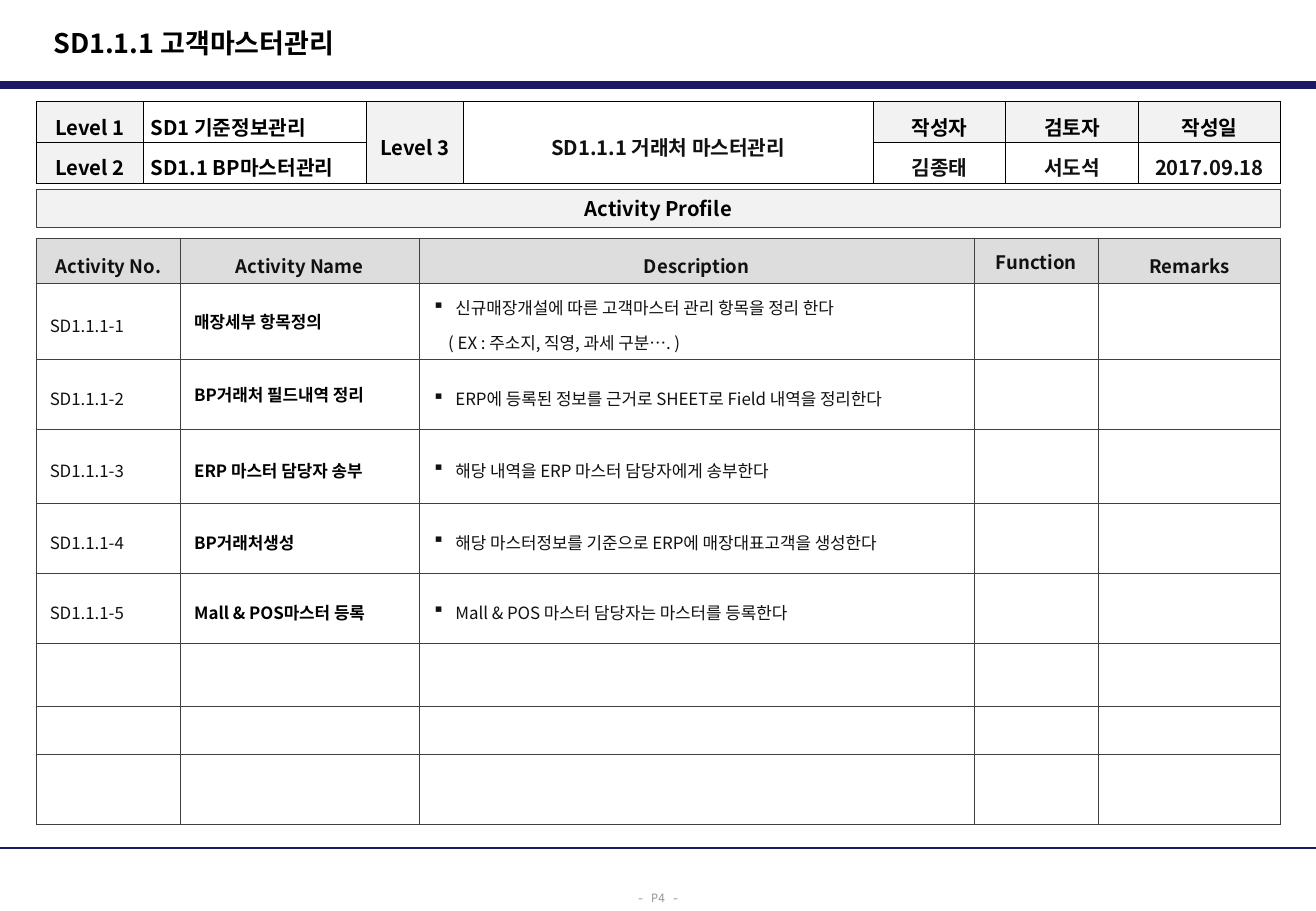
from dataclasses import dataclass

from lxml.etree import SubElement
from pptx import Presentation
from pptx.dml.color import RGBColor
from pptx.enum.shapes import MSO_CONNECTOR as Connector, MSO_SHAPE as Shape
from pptx.enum.text import MSO_ANCHOR as Anchor, PP_ALIGN as Align
from pptx.oxml.ns import qn
from pptx.util import Cm, Pt

FONT = "Noto Sans CJK KR"
NAVY, BLACK, INK, BORDER = "191966", "000000", "111111", "404040"
PALE, GREY = "F2F2F2", "DDDDDD"


@dataclass
class Box:
    """A region of the slide, in centimetres."""
    left: float
    top: float
    width: float
    height: float

    def lengths(self):
        return Cm(self.left), Cm(self.top), Cm(self.width), Cm(self.height)


def color(value):
    return RGBColor.from_string(value)


def style(paragraph, size, ink, bold=False, align=Align.LEFT, spacing=None, name=FONT):
    paragraph.alignment = align
    if spacing:
        paragraph.line_spacing = spacing
    font = paragraph.font
    font.name, font.size, font.bold = name, Pt(size), bold
    font.color.rgb = color(ink)
    # East Asian typeface
    properties = paragraph._p.get_or_add_pPr().find(qn("a:defRPr"))
    SubElement(properties, qn("a:ea")).set("typeface", name)


def indent(paragraph, left, bullet=None):
    properties = paragraph._p.get_or_add_pPr()
    properties.set("marL", str(Cm(left)))
    properties.set("indent", str(Cm(-left if bullet else 0)))
    if bullet:
        SubElement(properties, qn("a:buChar")).set("char", bullet)


def add_rule(slide, box, weight):
    line = slide.shapes.add_connector(
        Connector.STRAIGHT, Cm(box.left), Cm(box.top),
        Cm(box.left + box.width), Cm(box.top + box.height))
    line.line.color.rgb = color(NAVY)
    line.line.width = Pt(weight)
    SubElement(line._element.spPr, qn("a:effectLst"))


def add_grid(slide, box, columns, rows, border, margins):
    """Add a plain bordered table whose columns and rows share the box."""
    table = slide.shapes.add_table(len(rows), len(columns), *box.lengths()).table
    table.first_row = table.horz_banding = False
    for column, share in zip(table.columns, columns):
        column.width = Cm(box.width * share / sum(columns))
    for row, share in zip(table.rows, rows):
        row.height = Cm(box.height * share / sum(rows))
    side, edge = margins
    for cell in table.iter_cells():
        cell.margin_left = cell.margin_right = Cm(side)
        cell.margin_top = cell.margin_bottom = Cm(edge)
        cell.vertical_anchor = Anchor.MIDDLE
        properties = cell._tc.get_or_add_tcPr()
        for tag in ("a:lnL", "a:lnR", "a:lnT", "a:lnB"):
            line = SubElement(properties, qn(tag), w=str(Pt(0.5)))
            fill = SubElement(line, qn("a:solidFill"))
            SubElement(fill, qn("a:srgbClr"), val=border)
        cell.fill.background()
    return table


def write_cell(cell, text, size, ink, bold=False, align=Align.LEFT, spacing=1.3, fill=None):
    cell.text = text
    style(cell.text_frame.paragraphs[0], size, ink, bold, align, spacing)
    if fill:
        cell.fill.solid()
        cell.fill.fore_color.rgb = color(fill)


def add_title(slide, box, text):
    title = slide.shapes.title
    title.left, title.top, title.width, title.height = box.lengths()
    title.text = text
    title.text_frame.vertical_anchor = Anchor.MIDDLE
    style(title.text_frame.paragraphs[0], 16, BLACK, bold=True)


def add_document_table(slide, box):
    columns = [2.24, 4.65, 2.03, 8.56, 2.77, 2.77, 2.97]
    table = add_grid(slide, box, columns, [1, 1], BLACK, (0.15, 0.02))
    for column in (2, 3):
        table.cell(0, column).merge(table.cell(1, column))
    texts = [
        ["Level 1", "SD1 기준정보관리", "Level 3", "SD1.1.1 거래처 마스터관리",
         "작성자", "검토자", "작성일"],
        ["Level 2", "SD1.1 BP마스터관리", None, None, "김종태", "서도석", "2017.09.18"],
    ]
    for row, line in enumerate(texts):
        for column, text in enumerate(line):
            if text is None:
                continue
            label = column in (0, 2) or (row == 0 and column > 3)
            write_cell(table.cell(row, column), text, 12,
                       BLACK if label or column == 1 else INK, bold=True,
                       align=Align.LEFT if column == 1 else Align.CENTER,
                       fill=PALE if label else None)


def add_profile_bar(slide, box, text):
    bar = slide.shapes.add_shape(Shape.RECTANGLE, *box.lengths())
    bar.shadow.inherit = False
    bar.fill.solid()
    bar.fill.fore_color.rgb = color(PALE)
    bar.line.color.rgb = color(BORDER)
    bar.line.width = Pt(0.5)
    frame = bar.text_frame
    frame.text = text
    frame.vertical_anchor = Anchor.MIDDLE
    style(frame.paragraphs[0], 12, BLACK, bold=True, align=Align.CENTER)


def add_activity_table(slide, box):
    columns = [3.02, 4.98, 11.61, 2.59, 3.81]
    rows = [0.93, 1.59, 1.46, 1.54, 1.46, 1.46, 1.33, 1, 1.46]
    table = add_grid(slide, box, columns, rows, BORDER, (0.28, 0.1))
    # Header row
    headings = ["Activity No.", "Activity Name", "Description", "Function", "Remarks"]
    for column, heading in enumerate(headings):
        write_cell(table.cell(0, column), heading, 11, INK, bold=True, align=Align.CENTER,
                   spacing=1 if heading == "Function" else 1.3, fill=GREY)
    # Activities: name, its line spacing, description, example
    activities = [
        ("매장세부 항목정의", 1, "신규매장개설에 따른 고객마스터 관리 항목을 정리 한다",
         "( EX : 주소지, 직영, 과세 구분…. )"),
        ("BP거래처 필드내역 정리", 1, "ERP에 등록된 정보를 근거로 SHEET로 Field 내역을 정리한다", None),
        ("ERP 마스터 담당자 송부", 1.3, "해당 내역을 ERP 마스터 담당자에게 송부한다", None),
        ("BP거래처생성", 1.3, "해당 마스터정보를 기준으로 ERP에 매장대표고객을 생성한다", None),
        ("Mall & POS마스터 등록", 1.3, "Mall & POS 마스터 담당자는 마스터를 등록한다", None),
    ]
    for row, (name, spacing, description, example) in enumerate(activities, 1):
        write_cell(table.cell(row, 0), f"SD1.1.1-{row}", 10, INK)
        write_cell(table.cell(row, 1), name, 10, BLACK, bold=True, spacing=spacing)
        cell = table.cell(row, 2)
        cell.text = description
        paragraph = cell.text_frame.paragraphs[0]
        indent(paragraph, 0.48, "▪")
        style(paragraph, 10, INK, spacing=1.3)
        if example:
            paragraph = cell.text_frame.add_paragraph()
            paragraph.text = example
            paragraph.space_before = Pt(2)
            indent(paragraph, 0.33)
            style(paragraph, 10, INK, spacing=1.3)
    # Empty cells keep the row heights
    for cell in table.iter_cells():
        if not cell.text:
            cell.margin_top = cell.margin_bottom = 0


def add_page_number(slide, box, text):
    frame = slide.shapes.add_textbox(*box.lengths()).text_frame
    frame.word_wrap = True
    frame.text = text
    style(frame.paragraphs[0], 7, "969696", align=Align.CENTER, spacing=1.3,
          name="Noto Sans Mono")


def main():
    presentation = Presentation()
    presentation.slide_width, presentation.slide_height = Cm(27.51), Cm(19.05)
    slide = presentation.slides.add_slide(presentation.slide_layouts[5])
    add_rule(slide, Box(0, 1.78, 27.51, 0), 4.5)
    add_rule(slide, Box(0, 17.73, 27.51, 0), 1.5)
    add_title(slide, Box(0.86, 0.41, 18.06, 0.97), "SD1.1.1 고객마스터관리")
    add_document_table(slide, Box(0.76, 2.12, 26.01, 1.71))
    add_profile_bar(slide, Box(0.76, 3.96, 26.01, 0.79), "Activity Profile")
    add_activity_table(slide, Box(0.76, 4.99, 26.01, 12.26))
    add_page_number(slide, Box(12.76, 18.42, 2, 0.63), "- P4 -")
    presentation.save("out.pptx")


if __name__ == "__main__":
    main()
